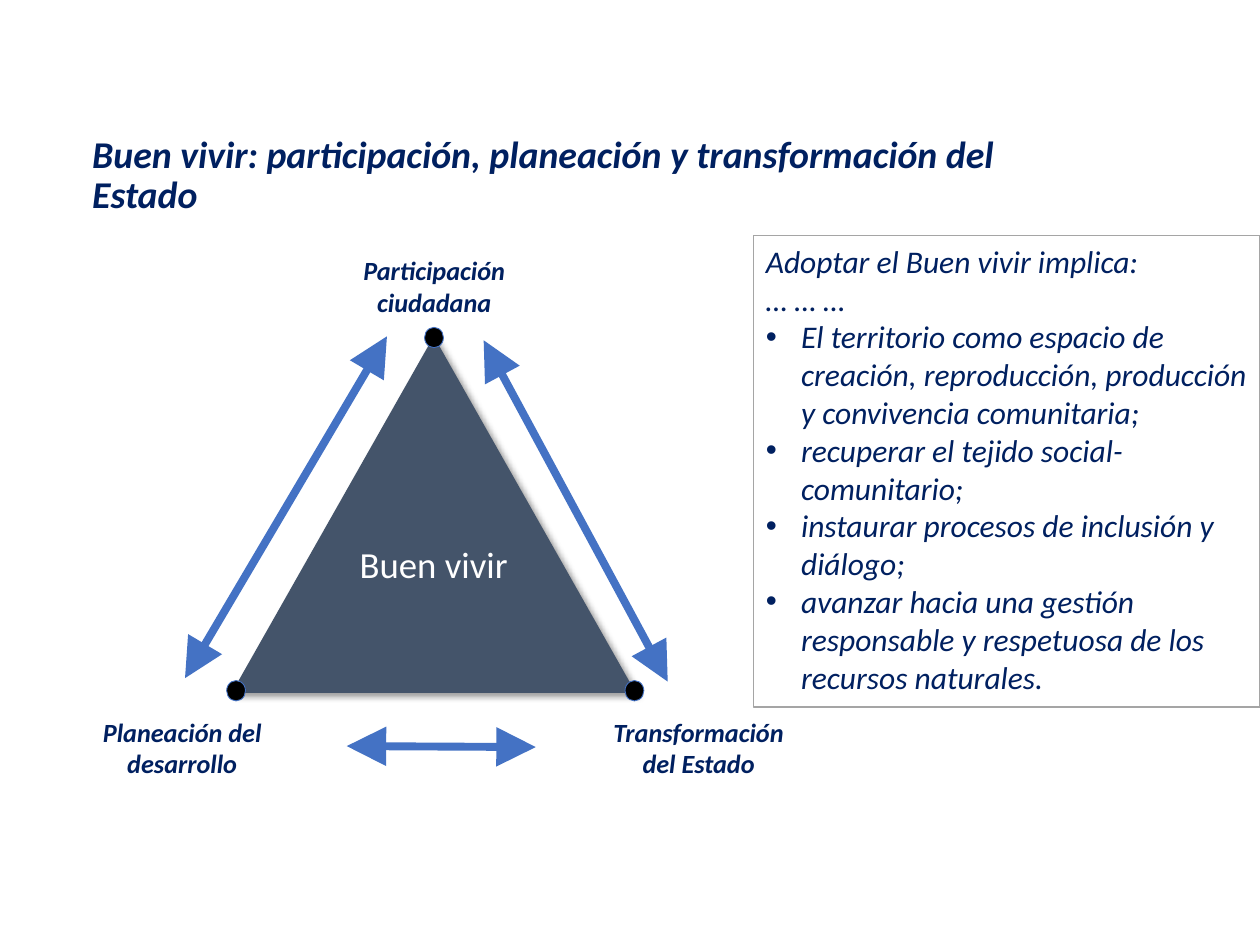
from typing import NamedTuple

from lxml import etree
from pptx import Presentation
from pptx import util as u
from pptx.dml.color import RGBColor
from pptx.enum import shapes, text
from pptx.oxml import ns

COLORS = {
    "navy": "002060",
    "slate": "44546A",
    "blue": "4472C4",
    "gray": "A5A5A5",
    "black": "000000",
    "white": "FFFFFF",
}
FONT = "Calibri"
DOT_SIZE = (0.38, 0.41)
LABEL_SIZE = (3.99, 0.97)


class Corner(NamedTuple):
    label: str
    label_at: tuple[float, float]
    dot_at: tuple[float, float]


class Arrow(NamedTuple):
    start: tuple[float, float]
    end: tuple[float, float]


CORNERS = [
    Corner("Participación ciudadana", (6.76, 5.28), (8.56, 6.6)),
    Corner("Transformación del Estado", (12.09, 14.58), (12.6, 13.72)),
    Corner("Planeación del desarrollo", (1.68, 14.58), (4.57, 13.72)),
]
ARROWS = [
    Arrow((3.73, 13.67), (7.8, 6.78)),
    Arrow((13.46, 13.74), (9.75, 6.86)),
    Arrow((10.8, 15.06), (6.99, 15.04)),
]
INTRO = ["Adoptar el Buen vivir implica:", "… … …"]
COMMITMENTS = [
    "El territorio como espacio de creación, reproducción, producción y convivencia comunitaria;",
    "recuperar el tejido social-comunitario;",
    "instaurar procesos de inclusión y diálogo;",
    "avanzar hacia una gestión responsable y respetuosa de los recursos naturales.",
]


def rgb(name: str) -> RGBColor:
    return RGBColor.from_string(COLORS[name])


def cm(*lengths: float) -> list[u.Length]:
    return [u.Cm(length) for length in lengths]


def add_child(parent, tag: str, **attributes: str):
    return etree.SubElement(parent, ns.qn(tag), attributes)


def write(paragraph, words: str, size: float, color: str = "navy",
          bold: bool = False, italic: bool = True) -> None:
    run = paragraph.add_run()
    run.text = words
    run.font.name = FONT
    run.font.size = u.Pt(size)
    run.font.bold = bold
    run.font.italic = italic
    run.font.color.rgb = rgb(color)


def draw_shape(slide, kind, box: tuple, fill: str, line: str | None = None, width: float = 1):
    shape = slide.shapes.add_shape(kind, *cm(*box))
    shape.shadow.inherit = False
    shape.fill.solid()
    shape.fill.fore_color.rgb = rgb(fill)
    if line:
        shape.line.color.rgb = rgb(line)
        shape.line.width = u.Pt(width)
    else:
        shape.line.fill.background()
    return shape


def draw_heading(slide, words: str, box: tuple, size: float):
    frame = slide.shapes.add_textbox(*cm(*box)).text_frame
    frame.word_wrap = True
    frame.vertical_anchor = text.MSO_ANCHOR.MIDDLE
    frame.margin_left = frame.margin_right = u.Cm(0.18)
    frame.margin_top = frame.margin_bottom = u.Cm(0.1)
    paragraph = frame.paragraphs[0]
    write(paragraph, words, size, bold=True)
    return paragraph


def draw_triangle(slide) -> None:
    triangle = draw_shape(slide, shapes.MSO_SHAPE.ISOSCELES_TRIANGLE,
                          (4.67, 6.78, 8.15, 7.19), "slate")
    effects = triangle._element.spPr.find(ns.qn("a:effectLst"))
    shadow = add_child(effects, "a:outerShdw", blurRad=str(u.Pt(4)), dist=str(u.Pt(3)),
                       dir="2700000", algn="tl", rotWithShape="0")
    shade = add_child(shadow, "a:srgbClr", val=COLORS["black"])
    add_child(shade, "a:alpha", val="40000")
    frame = triangle.text_frame
    frame.vertical_anchor = text.MSO_ANCHOR.MIDDLE
    frame.margin_bottom = u.Cm(1.75)
    center = frame.paragraphs[0]
    center.alignment = text.PP_ALIGN.CENTER
    write(center, "Buen vivir", 21, "white", italic=False)


def draw_corner(slide, corner: Corner) -> None:
    draw_shape(slide, shapes.MSO_SHAPE.OVAL, corner.dot_at + DOT_SIZE, "black", "blue", 0.5)
    label = draw_heading(slide, corner.label, corner.label_at + LABEL_SIZE, 15)
    label.alignment = text.PP_ALIGN.CENTER
    label.space_after = u.Pt(6)


def draw_arrow(slide, arrow: Arrow) -> None:
    connector = slide.shapes.add_connector(shapes.MSO_CONNECTOR.STRAIGHT,
                                           *cm(*arrow.start, *arrow.end))
    connector.line.color.rgb = rgb("blue")
    connector.line.width = u.Pt(4.5)
    stroke = connector.line._get_or_add_ln()
    for tip in ("a:headEnd", "a:tailEnd"):
        add_child(stroke, tip, type="triangle", w="lg", len="lg")
    add_child(connector._element.spPr, "a:effectLst")


def draw_commitments(slide) -> None:
    panel = draw_shape(slide, shapes.MSO_SHAPE.RECTANGLE,
                       (15.19, 4.75, 10.21, 9.5), "white", "gray")
    frame = panel.text_frame
    frame.word_wrap = True
    frame.auto_size = text.MSO_AUTO_SIZE.SHAPE_TO_FIT_TEXT
    frame.vertical_anchor = text.MSO_ANCHOR.TOP
    for index, words in enumerate(INTRO + COMMITMENTS):
        paragraph = frame.paragraphs[0] if index == 0 else frame.add_paragraph()
        paragraph.alignment = text.PP_ALIGN.LEFT
        if words in COMMITMENTS:
            properties = paragraph._p.get_or_add_pPr()
            indent = u.Cm(0.71)
            properties.set("marL", str(indent))
            properties.set("indent", str(-indent))
            add_child(properties, "a:buFont", typeface="Arial")
            add_child(properties, "a:buChar", char="•")
        write(paragraph, words, 18)


def main() -> None:
    deck = Presentation()
    deck.slide_width, deck.slide_height = cm(25.4, 19.05)
    slide = deck.slides.add_slide(deck.slide_layouts[6])
    title = draw_heading(slide, "Buen vivir: participación, planeación y transformación del Estado",
                         (1.68, 2.92, 20.5, 1.27), 21.6)
    title.line_spacing = 0.9
    draw_triangle(slide)
    for corner in CORNERS:
        draw_corner(slide, corner)
    for arrow in ARROWS:
        draw_arrow(slide, arrow)
    draw_commitments(slide)
    deck.save("out.pptx")


if __name__ == "__main__":
    main()
